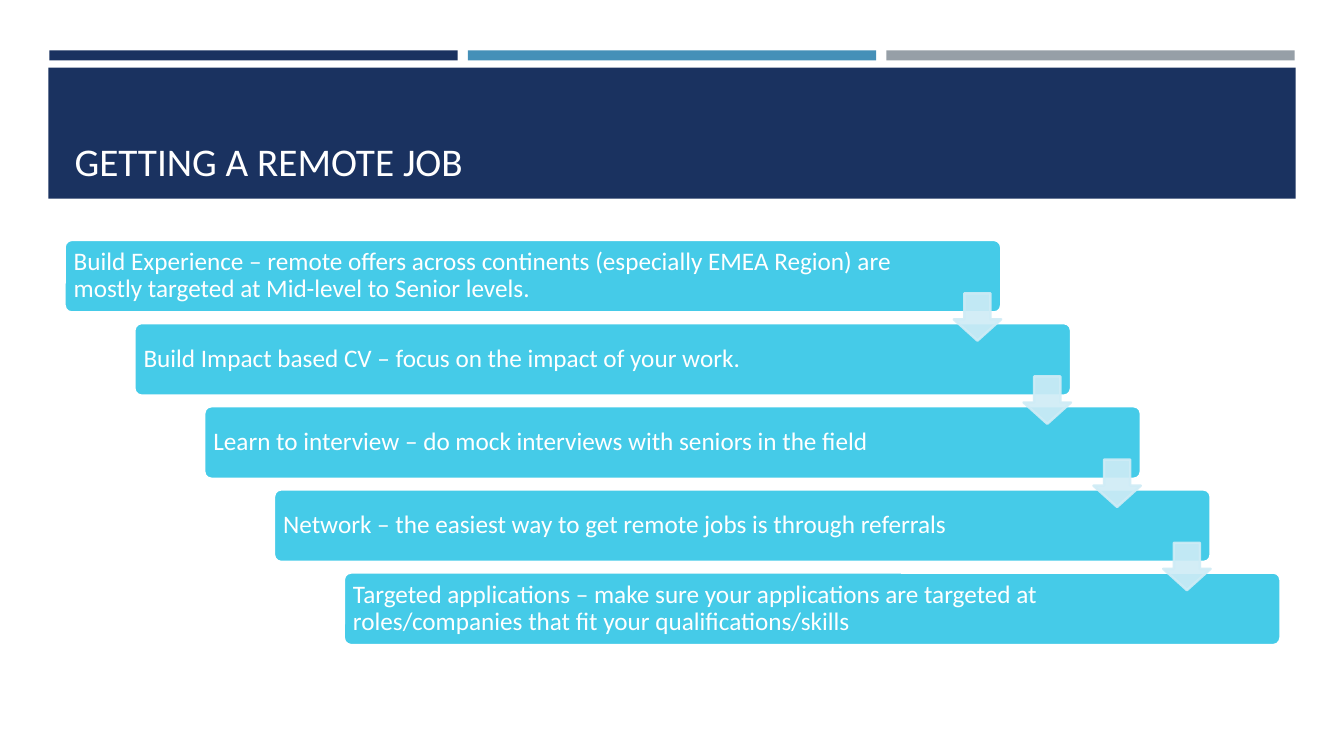
import pptx
import pptx.util
import pptx.dml.color
import pptx.enum.shapes
import pptx.enum.text
import lxml.etree

TITLE = "GETTING A REMOTE JOB"
STEPS = [
    "Build Experience – remote offers across continents (especially EMEA Region) are "
    "mostly targeted at Mid-level to Senior levels.",
    "Build Impact based CV – focus on the impact of your work.",
    "Learn to interview – do mock interviews with seniors in the field",
    "Network – the easiest way to get remote jobs is through referrals",
    "Targeted applications – make sure your applications are targeted at "
    "roles/companies that fit your qualifications/skills",
]
STRIPES = ["1A3260", "4590B8", "969FA7"]
NAVY, CYAN, PALE, WHITE = "1A3260", "45CBE8", "CFECF6", "FFFFFF"
FONT = "Calibri"
PX = 9144  # 100 px to the inch

KIND = pptx.enum.shapes.MSO_SHAPE
ANCHOR = pptx.enum.text.MSO_ANCHOR


def px(n):
    return pptx.util.Emu(round(n * PX))


def paint(color, code):
    color.rgb = pptx.dml.color.RGBColor.from_string(code)


def draw(kind, x, y, w, h, fill, line=None, adj=()):
    shape = slide.shapes.add_shape(kind, px(x), px(y), px(w), px(h))
    shape.shadow.inherit = False
    shape.fill.solid()
    paint(shape.fill.fore_color, fill)
    if line:
        paint(shape.line.color, line)
        shape.line.width = pptx.util.Pt(1.75)
    else:
        shape.line.fill.background()
    for i, value in enumerate(adj):
        shape.adjustments[i] = value
    return shape


def write(shape, text, size, anchor, pad, space=1.0):
    frame = shape.text_frame
    frame.word_wrap = True
    frame.vertical_anchor = anchor
    (frame.margin_left, frame.margin_top,
     frame.margin_right, frame.margin_bottom) = map(px, pad)
    para = frame.paragraphs[0]
    para.alignment = pptx.enum.text.PP_ALIGN.LEFT
    para.line_spacing = space
    run = para.add_run()
    run.text = text
    run.font.size = pptx.util.Pt(size)
    run.font.name = FONT
    paint(run.font.color, WHITE)


def fade(shape, percent):
    tag = "{http://schemas.openxmlformats.org/drawingml/2006/main}"
    for color in shape.element.spPr.iter(tag + "srgbClr"):
        lxml.etree.SubElement(color, tag + "alpha", val=str(percent * 1000))


deck = pptx.Presentation()
deck.slide_width, deck.slide_height = px(1333), px(750)
slide = deck.slides.add_slide(deck.slide_layouts[6])

# Stripes and title band
for i, color in enumerate(STRIPES):
    draw(KIND.RECTANGLE, 49 + 415 * i, 50, 405, 10, color)
band = draw(KIND.RECTANGLE, 48, 67, 1237, 130, NAVY)
write(band, TITLE, 28, ANCHOR.BOTTOM, (26, 10, 26, 14))

# Staircase of steps
LEFT, TOP, WIDE, HIGH = 64, 238, 929, 72
RIGHT, DOWN = 69.25, 82.5
for i, text in enumerate(STEPS):
    bar = draw(KIND.ROUNDED_RECTANGLE, LEFT + RIGHT * i, TOP + DOWN * i,
               WIDE, HIGH, CYAN, WHITE, [0.1])
    write(bar, text, 18, ANCHOR.MIDDLE, (7, 7, 90, 7), 0.9)

# Arrows from each step to the next
SIDE = 47
for i in range(len(STEPS) - 1):
    arrow = draw(KIND.DOWN_ARROW, LEFT + WIDE - SIDE + RIGHT * i, 291 + DOWN * i,
                 SIDE, SIDE, PALE, PALE, [0.55, 0.45])
    fade(arrow, 90)

deck.save("out.pptx")
